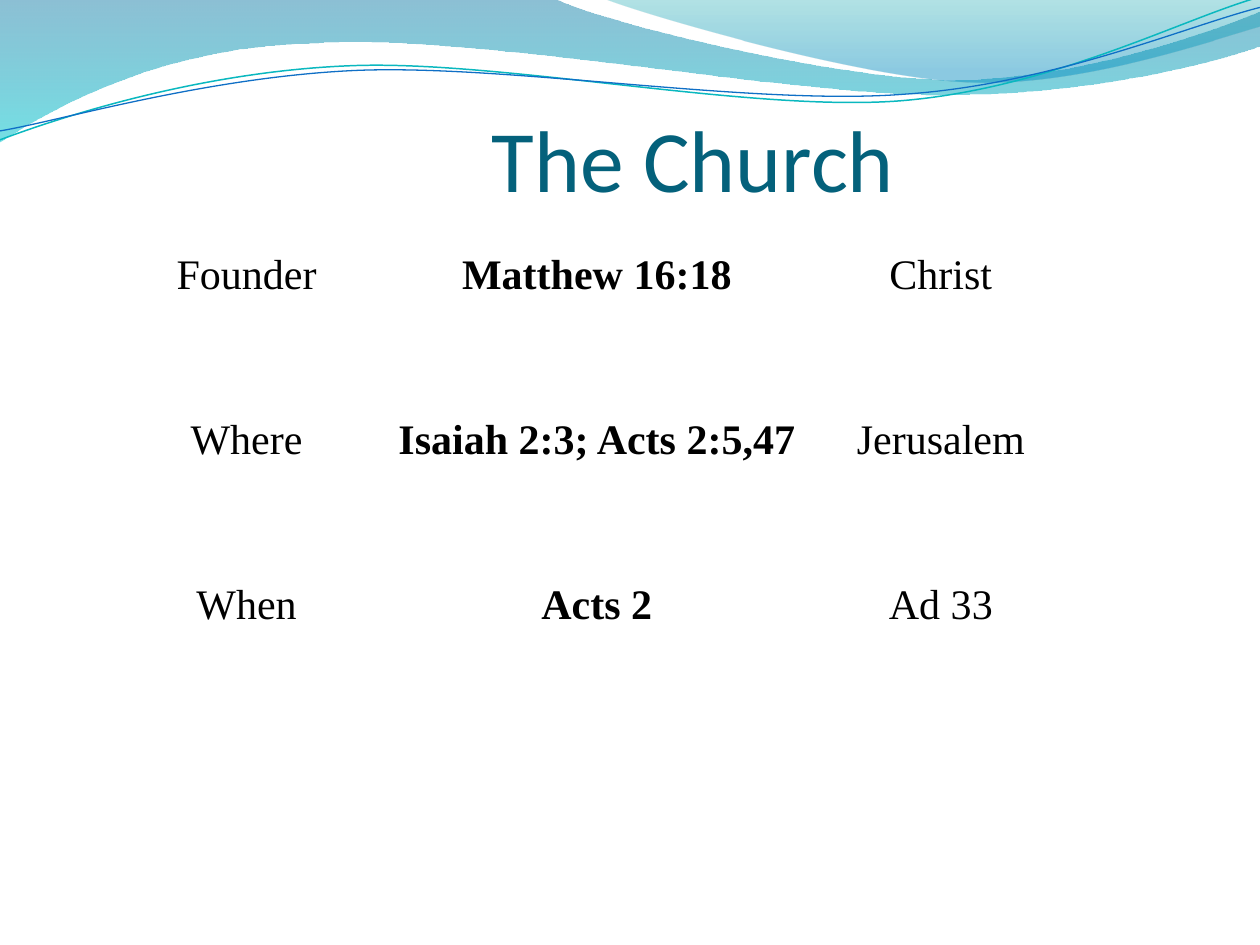
from lxml import etree
from pptx import Presentation
from pptx.dml.color import RGBColor
from pptx.enum import text
from pptx.oxml import ns
from pptx.util import Cm, Pt

TITLE_COLOR = RGBColor(0x04, 0x61, 0x7B)
BLACK = RGBColor(0, 0, 0)
TEAL = RGBColor(0x0A, 0xB8, 0xBF)
BLUE = RGBColor(0x0F, 0x6F, 0xC6)
DEEP_BLUE = RGBColor(0x00, 0x74, 0xA1)
AQUA = RGBColor(0x00, 0xC6, 0xCF)
SEA_GREEN = RGBColor(0x00, 0xA1, 0xA9)
SKY_BLUE = RGBColor(0x00, 0x8B, 0xBF)

TITLE = "The Church"
FACTS = [
    ("Founder", "Matthew 16:18", "Christ"),
    ("Where", "Isaiah 2:3; Acts 2:5,47", "Jerusalem"),
    ("When", "Acts 2", "Ad 33"),
]
COLUMN_WIDTHS = (5.28, 8.84, 5.03)
ROW_HEIGHT = 3.33
REFERENCE_COLUMN = 1

WAVES = [
    {
        "start": (0, 0),
        "segments": [
            [(11.18, -0.03)],
            [(12.09, 0.43), (16.87, 1.6), (19.25, 1.6)],
            [(21.67, 1.6), (24.33, 0.66), (25.4, 0.23)],
            [(25.43, 0.91)],
            [(24.97, 1.12), (22.1, 1.93), (18.95, 1.91)],
            [(15.8, 1.91), (9.7, 0.71), (6.53, 0.86)],
            [(3.28, 0.91), (1.17, 2.11), (-0.03, 2.87)],
            [(0, 0)],
        ],
        "stops": [(0, DEEP_BLUE, 45), (1, AQUA, 55)],
    },
    {
        "start": (12.17, -0.03),
        "segments": [
            [(12.93, 0.28), (17.32, 1.57), (19.53, 1.65)],
            [(21.74, 1.75), (24.41, 0.81), (25.4, 0.53)],
            [(25.4, 0)],
            [(12.17, -0.03)],
        ],
        "stops": [(0, SEA_GREEN, 30), (0.8, SKY_BLUE, 45)],
    },
]
RIPPLES = [
    {
        "start": (-0.05, 2.22),
        "segments": [
            [(1.19, 1.82), (4.02, 1.04), (7.05, 1.06)],
            [(10.05, 1.07), (15.02, 2.37), (18.08, 2.29)],
            [(21.13, 2.2), (23.87, 0.91), (25.41, 0.55)],
        ],
        "line": (TEAL, 0.85),
    },
    {
        "start": (-0.04, 2.04),
        "segments": [
            [(1.16, 1.9), (4.18, 1.15), (7.2, 1.16)],
            [(10.25, 1.18), (15.13, 2.25), (18.19, 2.16)],
            [(21.21, 2.1), (23.93, 1.06), (25.45, 0.75)],
        ],
        "line": (BLUE, 0.75),
    },
]
RIPPLE_ROTATION = 357.3


def add_outline(slide, outline, close):
    start_x, start_y = outline["start"]
    segments = outline["segments"]
    points = [(Cm(x), Cm(y)) for segment in segments for x, y in segment]
    builder = slide.shapes.build_freeform(Cm(start_x), Cm(start_y), scale=1.0)
    builder.add_line_segments(points, close=close)
    shape = builder.convert_to_shape()
    shape.shadow.inherit = False
    steps = iter(list(shape._element.spPr.iter(ns.qn("a:lnTo"))))
    for segment in segments:
        group = [next(steps) for _ in segment]
        if len(group) == 3:
            curve = etree.Element(ns.qn("a:cubicBezTo"))
            group[0].addprevious(curve)
            for step in group:
                curve.append(step[0])
                step.getparent().remove(step)
    return shape


def add_wave(slide, wave):
    shape = add_outline(slide, wave, True)
    shape.line.fill.background()
    shape.fill.gradient()
    shape.fill.gradient_angle = 270
    for stop, (position, color, _) in zip(shape.fill.gradient_stops, wave["stops"]):
        stop.position = position
        stop.color.rgb = color
    colors = shape._element.spPr.iter(ns.qn("a:srgbClr"))
    for color, (_, _, opacity) in zip(colors, wave["stops"]):
        etree.SubElement(color, ns.qn("a:alpha"), val=str(opacity * 1000))


def add_ripple(slide, ripple):
    shape = add_outline(slide, ripple, False)
    shape.rotation = RIPPLE_ROTATION
    shape.fill.background()
    color, width = ripple["line"]
    shape.line.color.rgb = color
    shape.line.width = Pt(width)


def add_centred_run(paragraph, words, font_name, size, color, bold=False):
    paragraph.alignment = text.PP_ALIGN.CENTER
    run = paragraph.add_run()
    run.text = words
    run.font.name = font_name
    run.font.size = Pt(size)
    run.font.bold = bold
    run.font.color.rgb = color


def add_title(slide):
    shape = slide.shapes.add_textbox(Cm(2.12), Cm(1.07), Cm(23.7), Cm(3.17))
    frame = shape.text_frame
    frame.word_wrap = True
    frame.vertical_anchor = text.MSO_ANCHOR.BOTTOM
    frame.margin_left = frame.margin_right = frame.margin_bottom = 0
    frame.margin_top = Cm(0.13)
    add_centred_run(frame.paragraphs[0], TITLE, "Calibri", 50, TITLE_COLOR)


def add_facts(slide):
    table = slide.shapes.add_table(
        len(FACTS), len(COLUMN_WIDTHS), Cm(2.33), Cm(5.08),
        Cm(sum(COLUMN_WIDTHS)), Cm(ROW_HEIGHT * len(FACTS))).table
    table.first_row = table.horz_banding = False
    for column, width in zip(table.columns, COLUMN_WIDTHS):
        column.width = Cm(width)
    for row, facts in zip(table.rows, FACTS):
        row.height = Cm(ROW_HEIGHT)
        for index, (cell, words) in enumerate(zip(row.cells, facts)):
            cell.fill.background()
            cell.margin_left = cell.margin_right = Cm(0.18)
            cell.margin_top = cell.margin_bottom = 0
            add_centred_run(cell.text_frame.paragraphs[0], words,
                            "Times New Roman", 24, BLACK, index == REFERENCE_COLUMN)


def main():
    presentation = Presentation()
    presentation.slide_width, presentation.slide_height = Cm(25.4), Cm(19.05)
    slide = presentation.slides.add_slide(presentation.slide_layouts[6])
    for wave in WAVES:
        add_wave(slide, wave)
    for ripple in RIPPLES:
        add_ripple(slide, ripple)
    add_title(slide)
    add_facts(slide)
    presentation.save("out.pptx")


if __name__ == "__main__":
    main()
